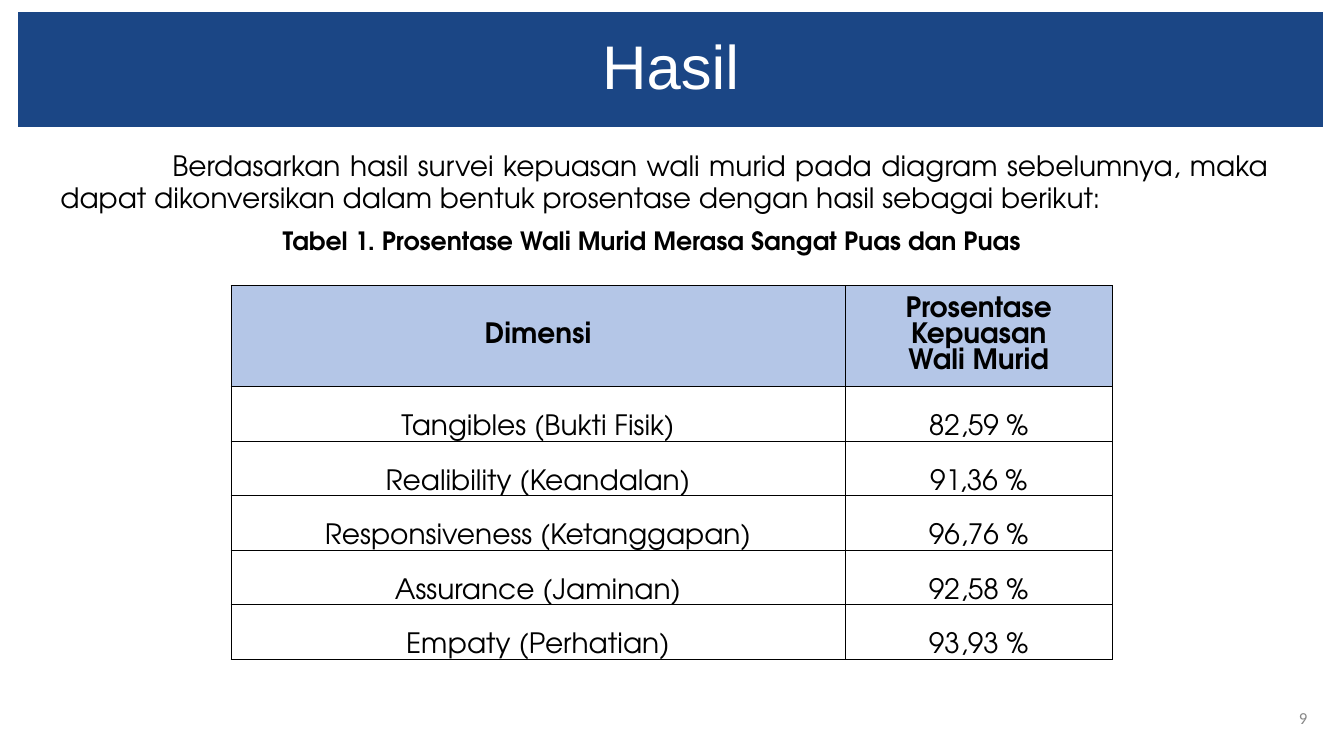
from dataclasses import dataclass

from lxml import etree
from pptx import Presentation
from pptx.dml.color import RGBColor
from pptx.enum import shapes, text
from pptx.oxml import ns
from pptx.util import Pt


@dataclass(frozen=True)
class Theme:
    navy: str = "1B4685"
    header: str = "B4C6E7"
    white: str = "FFFFFF"
    black: str = "000000"
    grey: str = "888888"
    title_font: str = "Arial"
    body_font: str = "TeX Gyre Adventor"
    number_font: str = "Calibri"
    title_size: int = 44
    body_size: int = 20
    caption_size: int = 18
    number_size: int = 12


THEME = Theme()
CENTER, RIGHT, JUSTIFY = text.PP_ALIGN.CENTER, text.PP_ALIGN.RIGHT, text.PP_ALIGN.JUSTIFY
TOP, MIDDLE, BOTTOM = text.MSO_ANCHOR.TOP, text.MSO_ANCHOR.MIDDLE, text.MSO_ANCHOR.BOTTOM

INTRO = ("Berdasarkan hasil survei kepuasan wali murid pada diagram sebelumnya, maka "
         "dapat dikonversikan dalam bentuk prosentase dengan hasil sebagai berikut:")
CAPTION = "Tabel 1. Prosentase Wali Murid Merasa Sangat Puas dan Puas"
HEADINGS = ("Dimensi", "Prosentase Kepuasan\nWali Murid")
RESULTS = (
    ("Tangibles (Bukti Fisik)", "82,59 %"),
    ("Realibility (Keandalan)", "91,36 %"),
    ("Responsiveness (Ketanggapan)", "96,76 %"),
    ("Assurance (Jaminan)", "92,58 %"),
    ("Empaty (Perhatian)", "93,93 %"),
)


def add_run(p, words, size, font=THEME.body_font, color=THEME.black, bold=False):
    r = p.add_run()
    r.text = words
    r.font.size, r.font.name, r.font.bold = Pt(size), font, bold
    r.font.color.rgb = RGBColor.from_string(color)


def add_text_box(s, box, anchor):
    tf = s.shapes.add_textbox(*map(Pt, box)).text_frame
    tf.word_wrap = True
    tf.vertical_anchor = anchor
    return tf


def format_paragraph(p, alignment, spacing, indent):
    p.alignment, p.line_spacing = alignment, spacing
    pPr = p._p.get_or_add_pPr()
    pPr.set("marL", str(Pt(36)))
    pPr.set("indent", str(Pt(indent)))


def add_title(s, box):
    sp = s.shapes.add_shape(shapes.MSO_SHAPE.RECTANGLE, *map(Pt, box))
    sp.shadow.inherit = False
    sp.fill.solid()
    sp.fill.fore_color.rgb = RGBColor.from_string(THEME.navy)
    sp.line.fill.background()
    sp.text_frame.vertical_anchor = MIDDLE
    p = sp.text_frame.paragraphs[0]
    p.alignment, p.line_spacing = CENTER, 0.9
    add_run(p, "Hasil", THEME.title_size, THEME.title_font, THEME.white)


def add_intro(s, box):
    tf = add_text_box(s, box, TOP)
    p = tf.paragraphs[0]
    format_paragraph(p, JUSTIFY, 0.95, 80)
    add_run(p, INTRO, THEME.body_size)

    p = tf.add_paragraph()
    format_paragraph(p, CENTER, 0.9, -18)
    p.space_before = Pt(10)
    add_run(p, CAPTION, THEME.caption_size, bold=True)


def set_borders(cell):
    tcPr = cell._tc.get_or_add_tcPr()
    for i, side in enumerate(("lnL", "lnR", "lnT", "lnB")):
        ln = etree.Element(ns.qn(f"a:{side}"), w=str(Pt(0.5)))
        fill = etree.SubElement(ln, ns.qn("a:solidFill"))
        etree.SubElement(fill, ns.qn("a:srgbClr"), val=THEME.black)
        tcPr.insert(i, ln)


def fill_cell(cell, words, fill, anchor, bold):
    cell.fill.solid()
    cell.fill.fore_color.rgb = RGBColor.from_string(fill)
    set_borders(cell)
    cell.margin_left = cell.margin_right = cell.margin_top = cell.margin_bottom = 0
    cell.vertical_anchor = anchor
    tf = cell.text_frame
    for i, line in enumerate(words.split("\n")):
        p = tf.add_paragraph() if i else tf.paragraphs[0]
        p.alignment = CENTER
        add_run(p, line, THEME.body_size, bold=bold)


def add_results(s, box):
    left, top, width, height = box
    header_height, value_width = 65, 191
    rows = (HEADINGS, *RESULTS)
    table = s.shapes.add_table(len(rows), 2, *map(Pt, box)).table
    table.columns[0].width = Pt(width - value_width)
    table.columns[1].width = Pt(value_width)
    for i, row in enumerate(rows):
        header = i == 0
        table.rows[i].height = Pt(header_height if header
                                  else (height - header_height) / len(RESULTS))
        for j, words in enumerate(row):
            if header:
                fill_cell(table.cell(i, j), words, THEME.header, MIDDLE, True)
            else:
                fill_cell(table.cell(i, j), words, THEME.white, BOTTOM, False)


def add_page_number(s, box):
    p = add_text_box(s, box, MIDDLE).paragraphs[0]
    p.alignment = RIGHT
    add_run(p, "9", THEME.number_size, THEME.number_font, THEME.grey)


def main():
    prs = Presentation()
    prs.slide_width, prs.slide_height = Pt(960), Pt(540)
    s = prs.slides.add_slide(prs.slide_layouts[6])
    add_page_number(s, (900, 498.5, 41, 29))
    add_title(s, (13, 8.7, 932, 82))
    add_intro(s, (0, 104, 913, 90))
    add_results(s, (165, 204, 629.6, 259.6))
    prs.save("out.pptx")


if __name__ == "__main__":
    main()
